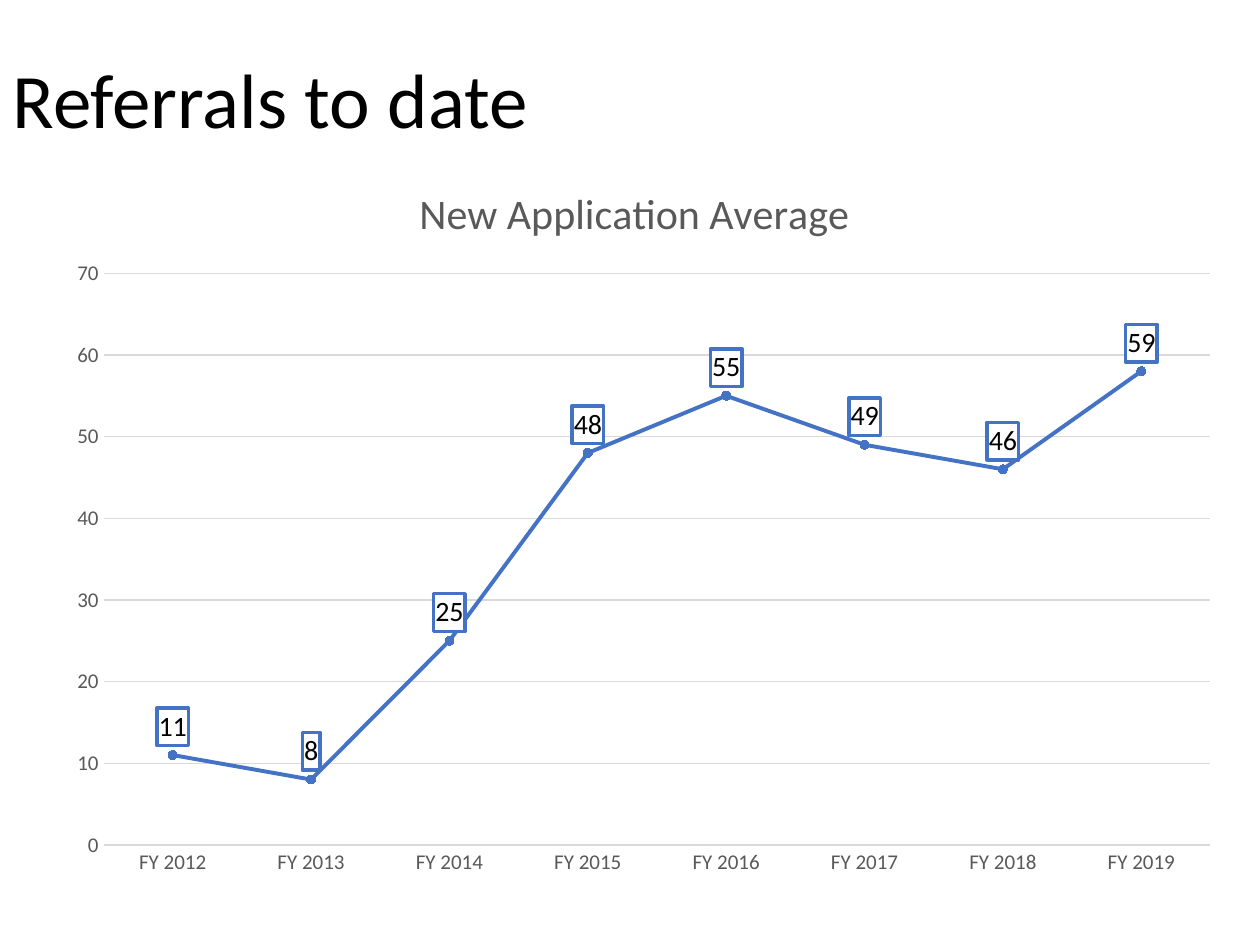
"""Build the slide with the line chart of referrals per fiscal year."""
import pptx
import pptx.chart.data
import pptx.dml.color
import pptx.enum.chart
import pptx.enum.text
import pptx.oxml
import pptx.oxml.ns
import pptx.util

Pt = pptx.util.Pt
RGB = pptx.dml.color.RGBColor
BLACK = RGB(0, 0, 0)
WHITE = RGB(255, 255, 255)
GRAY = RGB(0x59, 0x59, 0x59)
PALE = RGB(0xD9, 0xD9, 0xD9)
BLUE = RGB(0x44, 0x72, 0xC4)
FACE = "Calibri"


def style(font, size, color):
    """Set face, size and color of a font."""
    font.name = FACE
    font.size = Pt(size)
    font.bold = False
    font.color.rgb = color


deck = pptx.Presentation()
deck.slide_width, deck.slide_height = Pt(720), Pt(540)
slide = deck.slides.add_slide(deck.slide_layouts[5])

title = slide.shapes.title
title.left, title.top, title.width, title.height = Pt(0), Pt(0), Pt(720), Pt(118.8)
title.text_frame.text = "Referrals to date"
title.text_frame.vertical_anchor = pptx.enum.text.MSO_ANCHOR.MIDDLE
head = title.text_frame.paragraphs[0]
head.alignment = pptx.enum.text.PP_ALIGN.LEFT
head.line_spacing = 0.9
style(head.font, 44, BLACK)

data = pptx.chart.data.CategoryChartData(number_format="0")
data.categories = [f"FY {year}" for year in range(2012, 2020)]
data.add_series("Series 1", (11, 8, 25, 48, 55, 49, 46, 58))
frame = slide.shapes.add_chart(
    pptx.enum.chart.XL_CHART_TYPE.LINE_MARKERS,
    Pt(12.24), Pt(88.56), Pt(700.56), Pt(442.08), data)
chart = frame.chart
style(chart.font, 10, BLACK)
chart.has_legend = False
chart.has_title = True
chart.chart_title.include_in_layout = False
name = chart.chart_title.text_frame
name.text = "New Application Average"
style(name.paragraphs[0].font, 24, GRAY)

for axis in (chart.category_axis, chart.value_axis):
    axis.major_tick_mark = pptx.enum.chart.XL_TICK_MARK.NONE
    axis.minor_tick_mark = pptx.enum.chart.XL_TICK_MARK.NONE
    style(axis.tick_labels.font, 12, GRAY)
base, scale = chart.category_axis, chart.value_axis
scale.minimum_scale, scale.maximum_scale, scale.major_unit = 0, 70, 10
scale.tick_labels.number_format = "0"
scale.tick_labels.number_format_is_linked = False
scale.format.line.fill.background()
for line in (base.format.line, scale.major_gridlines.format.line):
    line.color.rgb = PALE
    line.width = Pt(0.75)

plot = chart.plots[0]
plot.vary_by_categories = False
series = plot.series[0]
series.smooth = False
series.format.line.color.rgb = BLUE
series.format.line.width = Pt(2.25)
mark = series.marker
mark.style = pptx.enum.chart.XL_MARKER_STYLE.CIRCLE
mark.size = 5
mark.format.fill.solid()
mark.format.fill.fore_color.rgb = BLUE
mark.format.line.color.rgb = BLUE

labels = series.data_labels
labels.show_value = True
labels.number_format = "0"
labels.number_format_is_linked = False
labels.position = pptx.enum.chart.XL_LABEL_POSITION.ABOVE
style(labels.font, 16, BLACK)
last = series.points[7].data_label
last.text_frame.text = "59"
last.position = pptx.enum.chart.XL_LABEL_POSITION.ABOVE
style(last.text_frame.paragraphs[0].runs[0].font, 16, BLACK)

spaces = pptx.oxml.ns.nsdecls("c", "a")
for node in series._element.xpath("c:dLbls/c:numFmt | c:dLbls/c:dLbl/c:tx"):
    node.addnext(pptx.oxml.parse_xml(
        f'<c:spPr {spaces}><a:solidFill><a:srgbClr val="{WHITE}"/></a:solidFill>'
        f'<a:ln w="{Pt(2)}"><a:solidFill><a:srgbClr val="{BLUE}"/></a:solidFill>'
        '</a:ln></c:spPr>'))

area = chart._chartSpace.xpath("c:chart/c:plotArea")[0]
for node in area.xpath("c:layout"):
    area.remove(node)
place = '<c:layoutTarget val="inner"/><c:xMode val="edge"/><c:yMode val="edge"/>'
for key, part in zip("xywh", (0.067, 0.153, 0.903, 0.739)):
    place += f'<c:{key} val="{part}"/>'
area.insert(0, pptx.oxml.parse_xml(
    f'<c:layout {spaces}><c:manualLayout>{place}</c:manualLayout></c:layout>'))

deck.save("out.pptx")
